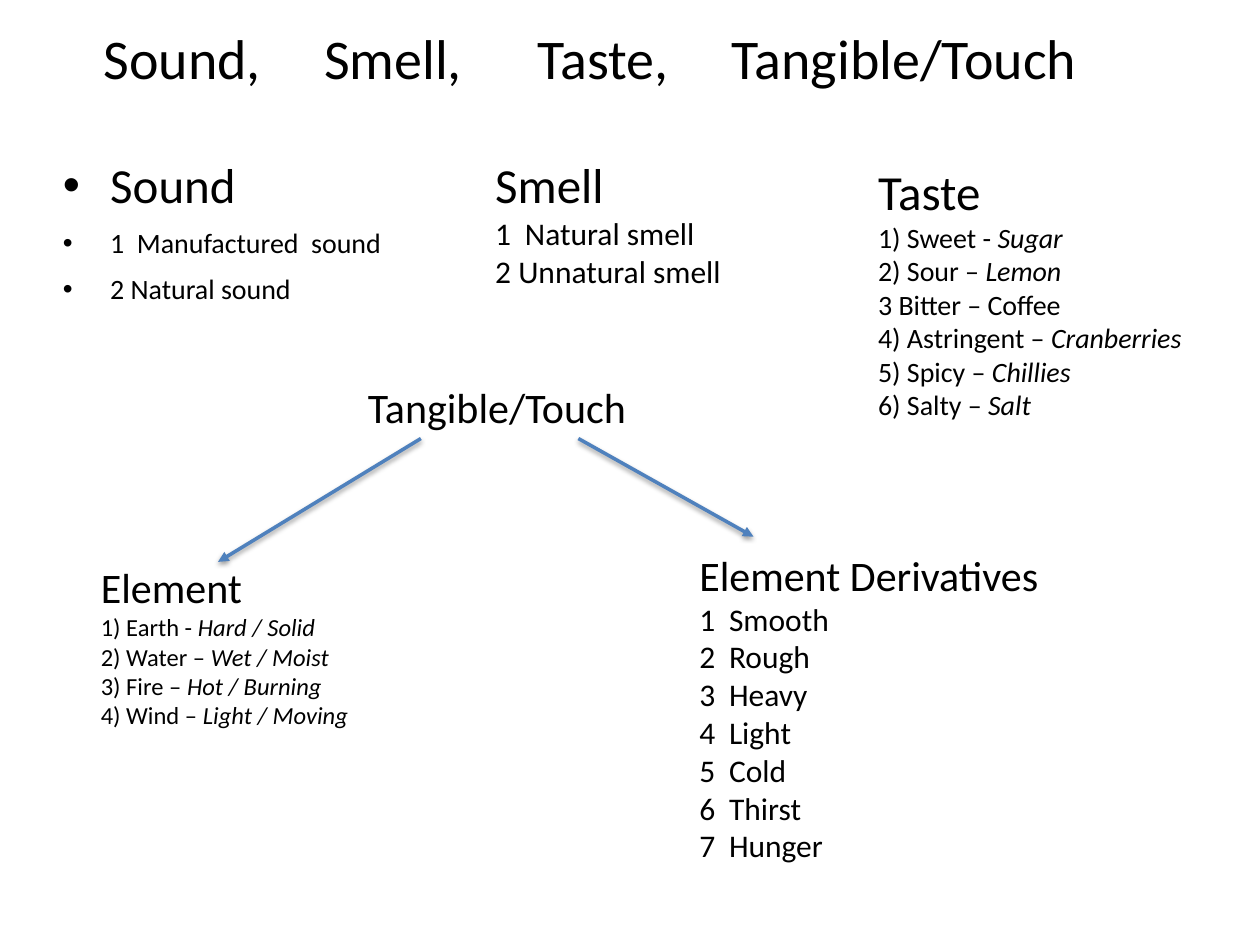
"""Build a slide on sound, smell, taste and touch."""
import pptx
import pptx.dml.color
import pptx.enum.shapes
import pptx.oxml
import pptx.oxml.ns
import pptx.util

Pt = pptx.util.Pt
COLOURS = {"text": "000000", "arrow": "4F81BD", "shadow": "000000", "background": "FFFFFF"}


def colour(name):
    """Return the named colour."""
    return pptx.dml.color.RGBColor.from_string(COLOURS[name])


def append_xml(parent, xml):
    """Append a drawing element given as text without its namespace."""
    namespace = pptx.oxml.ns.nsdecls("a")
    tag, rest = xml.split(" ", 1)
    parent.append(pptx.oxml.parse_xml(f"{tag} {namespace} {rest}"))


class SlideBuilder:
    """Hold the style and the current slide."""

    font = "Calibri"
    inset = Pt(3.6)
    number_tab = 17

    def __init__(self, presentation):
        """Add a blank slide."""
        self.slide = presentation.slides.add_slide(presentation.slide_layouts[6])
        self.slide.background.fill.solid()
        self.slide.background.fill.fore_color.rgb = colour("background")

    def frame(self, left, top, width, height):
        """Add an empty wrapping text box and return its frame."""
        frame = self.slide.shapes.add_textbox(Pt(left), Pt(top), Pt(width), Pt(height)).text_frame
        frame.word_wrap = True
        frame.margin_left = frame.margin_right = self.inset
        frame.margin_top = frame.margin_bottom = self.inset
        return frame

    def paragraph(self, paragraph, text, size, tabs=(), bulleted=False):
        """Write one paragraph, with the part after a bar in italics."""
        properties = paragraph._p.get_or_add_pPr()
        if bulleted:
            paragraph.space_before = Pt(7)
            properties.set("marL", str(Pt(27)))
            properties.set("indent", str(-Pt(27)))
            append_xml(properties, '<a:buFont typeface="Arial"/>')
            append_xml(properties, '<a:buChar char="•"/>')
        if tabs:
            stops = "".join(f'<a:tab pos="{Pt(stop)}" algn="l"/>' for stop in tabs)
            append_xml(properties, f"<a:tabLst >{stops}</a:tabLst>")
        paragraph.font.name = self.font
        paragraph.font.size = Pt(size)
        paragraph.font.color.rgb = colour("text")
        plain, _, example = text.partition("|")
        paragraph.add_run().text = plain
        if example:
            run = paragraph.add_run()
            run.text = example
            run.font.italic = True

    def title(self, box, text, size, indent, tabs):
        """Add the title with its words on tab stops."""
        frame = self.frame(*box)
        frame.margin_left = self.inset + Pt(indent)
        self.paragraph(frame.paragraphs[0], text, size, tabs)

    def topic(self, box, heading, heading_size, items=(), item_size=16, bulleted=False):
        """Add a heading with its items below."""
        frame = self.frame(*box)
        self.paragraph(frame.paragraphs[0], heading, heading_size, bulleted=bulleted)
        for item in items:
            tabs = (self.number_tab,) if "\t" in item else ()
            self.paragraph(frame.add_paragraph(), item, item_size, tabs, bulleted)

    def arrow(self, start, end):
        """Add a shadowed arrow."""
        arrow = self.slide.shapes.add_connector(
            pptx.enum.shapes.MSO_CONNECTOR.STRAIGHT, *map(Pt, start + end))
        arrow.line.color.rgb = colour("arrow")
        arrow.line.width = Pt(2)
        append_xml(arrow.line._get_or_add_ln(), '<a:tailEnd type="triangle"/>')
        append_xml(
            arrow._element.spPr,
            f'<a:effectLst ><a:outerShdw blurRad="{Pt(3)}" dist="{Pt(1.6)}" dir="5400000" '
            f'rotWithShape="0"><a:srgbClr val="{COLOURS["shadow"]}"><a:alpha val="38000"/>'
            "</a:srgbClr></a:outerShdw></a:effectLst>")


def main():
    """Build and save the slide."""
    presentation = pptx.Presentation()
    presentation.slide_width, presentation.slide_height = Pt(720), Pt(540)
    builder = SlideBuilder(presentation)

    builder.topic((32.4, 85, 648, 424.8), "Sound", 28,
                  ["1  Manufactured  sound", "2 Natural sound"], 16, bulleted=True)
    builder.topic((54, 317.5, 169.2, 105), "Element", 24,
                  ["1) Earth - |Hard / Solid", "2) Water – |Wet / Moist",
                   "3) Fire – |Hot / Burning", "4) Wind – |Light / Moving"], 14)
    builder.topic((279.4, 85, 182.2, 83.5), "Smell", 28,
                  ["1\tNatural smell", "2 Unnatural smell"], 18)
    builder.topic((498.2, 88.6, 182.2, 157.7), "Taste", 28,
                  ["1) Sweet - |Sugar", "2) Sour – |Lemon", "3 Bitter – Coffee",
                   "4) Astringent – |Cranberries", "5) Spicy – |Chillies", "6) Salty – |Salt"], 16)
    builder.topic((206.6, 214.6, 182.2, 31), "Tangible/Touch", 24)
    derivatives = ["Smooth", "Rough", "Heavy", "Light", "Cold", "Thirst", "Hunger"]
    builder.topic((396, 310.3, 242.6, 189.4), "Element Derivatives", 24,
                  [f"{number}\t{name}" for number, name in enumerate(derivatives, 1)], 18)

    builder.arrow((240.5, 250.6), (124.6, 321.1))
    builder.arrow((330.5, 250.6), (430.6, 306.7))
    builder.title((39.6, 10, 614.2, 38.9), "Sound,\tSmell,\tTaste,\tTangible/Touch", 32,
                  indent=16, tabs=(126, 248, 359))
    presentation.save("out.pptx")


if __name__ == "__main__":
    main()
